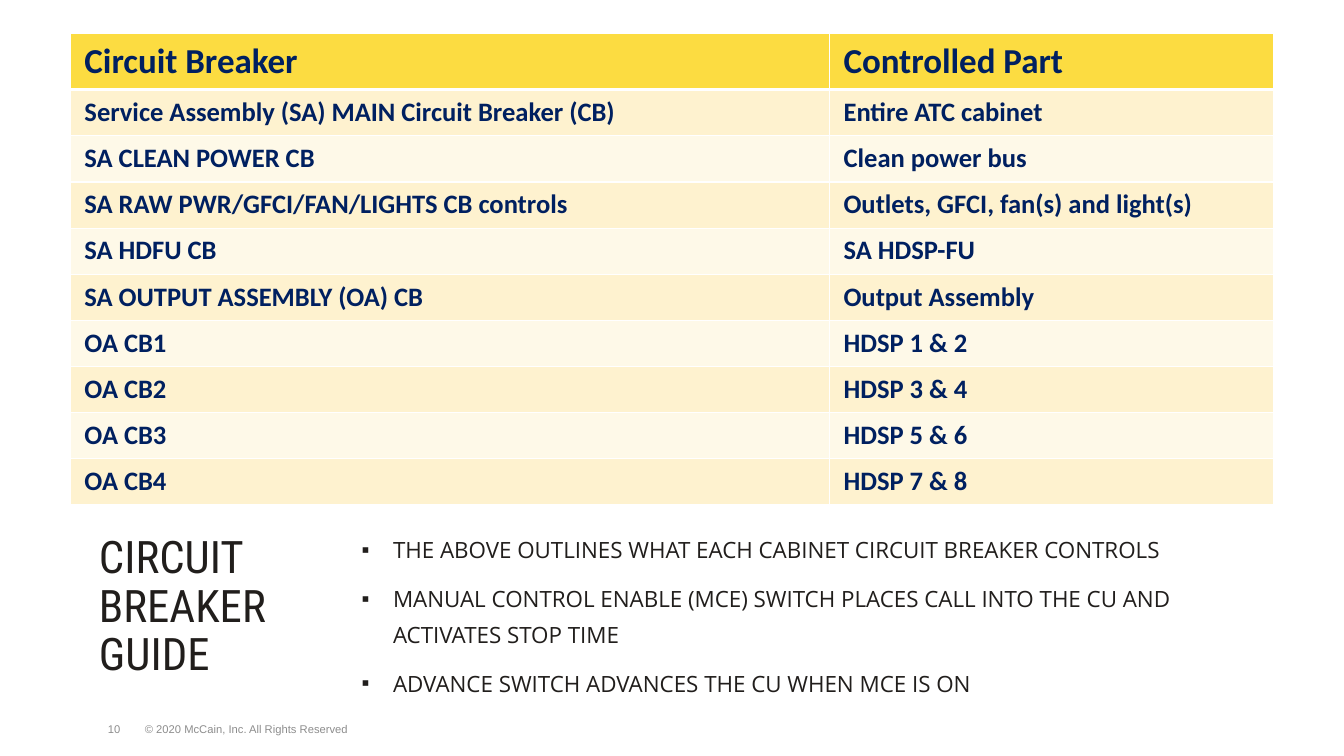
from lxml import etree
from pptx import Presentation
from pptx import util as u
from pptx.dml.color import RGBColor
from pptx.enum import text
from pptx.oxml import ns

TITLE = "CIRCUIT BREAKER GUIDE"
NOTES = [
    "THE ABOVE OUTLINES WHAT EACH CABINET CIRCUIT BREAKER CONTROLS",
    "MANUAL CONTROL ENABLE (MCE) SWITCH PLACES CALL INTO THE CU AND ACTIVATES STOP TIME",
    "ADVANCE SWITCH ADVANCES THE CU WHEN MCE IS ON",
]
BREAKERS = [
    ("Circuit Breaker", "Controlled Part"),
    ("Service Assembly (SA) MAIN Circuit Breaker (CB)", "Entire ATC cabinet"),
    ("SA CLEAN POWER CB", "Clean power bus"),
    ("SA RAW PWR/GFCI/FAN/LIGHTS CB controls", "Outlets, GFCI, fan(s) and light(s)"),
    ("SA HDFU CB", "SA HDSP-FU"),
    ("SA OUTPUT ASSEMBLY (OA) CB", "Output Assembly"),
    ("OA CB1", "HDSP 1 & 2"),
    ("OA CB2", "HDSP 3 & 4"),
    ("OA CB3", "HDSP 5 & 6"),
    ("OA CB4", "HDSP 7 & 8"),
]
FOOTERS = [
    ("© 2020 McCain, Inc. All Rights Reserved", 3.4, 9.25, text.PP_ALIGN.LEFT),
    ("10", 2.34, 1.07, text.PP_ALIGN.CENTER),
]
COLORS = {
    "ink": "211E1C", "navy": "002060", "gray": "8D8D8D", "rule": "FFFFFF",
    "header": "FCDC41", "odd": "FEF2CF", "even": "FEF9E8",
}
COLUMN_WIDTHS = (19.13, 11.18)
HEADER_HEIGHT, ROW_HEIGHT = 1.37, 1.16


def place(part, left, top, width, height):
    part.left, part.top = u.Cm(left), u.Cm(top)
    part.width, part.height = u.Cm(width), u.Cm(height)


def style(paragraph, font_name, size, color, bold=False):
    for run in paragraph.runs:
        run.font.name, run.font.size, run.font.bold = font_name, u.Pt(size), bold
        run.font.color.rgb = RGBColor.from_string(COLORS[color])


def set_frame(frame, anchor):
    frame.word_wrap = True
    frame.auto_size = text.MSO_AUTO_SIZE.NONE
    frame.vertical_anchor = anchor


def add_bullet(paragraph):
    props = paragraph._p.get_or_add_pPr()
    props.set("marL", str(u.Cm(0.79)))
    props.set("indent", str(-u.Cm(0.79)))
    etree.SubElement(props, ns.qn("a:buFont")).set("typeface", "Arial")
    etree.SubElement(props, ns.qn("a:buChar")).set("char", "▪")


def add_border(cell, side, points):
    line = etree.SubElement(cell._tc.get_or_add_tcPr(), ns.qn("a:ln" + side))
    line.set("w", str(u.Pt(points)))
    fill = etree.SubElement(line, ns.qn("a:solidFill"))
    etree.SubElement(fill, ns.qn("a:srgbClr")).set("val", COLORS["rule"])


def add_footers(slide):
    for words, left, width, align in FOOTERS:
        footer = slide.shapes.add_textbox(u.Cm(left), u.Cm(17.65), u.Cm(width), u.Cm(1.02))
        set_frame(footer.text_frame, text.MSO_ANCHOR.BOTTOM)
        line = footer.text_frame.paragraphs[0]
        line.text, line.alignment = words, align
        style(line, "Arial", 8, "gray")


def fill_title(title):
    place(title, 2.24, 13.23, 5.82, 4.04)
    set_frame(title.text_frame, text.MSO_ANCHOR.BOTTOM)
    heading = title.text_frame.paragraphs[0]
    heading.text, heading.alignment = TITLE, text.PP_ALIGN.LEFT
    heading.line_spacing = 0.9
    style(heading, "Roboto Condensed", 32, "ink")


def fill_notes(body):
    place(body, 8.86, 13.59, 22.73, 3.68)
    set_frame(body.text_frame, text.MSO_ANCHOR.MIDDLE)
    body.text_frame.text = "\n".join(NOTES)
    for index, note in enumerate(body.text_frame.paragraphs):
        add_bullet(note)
        note.alignment = text.PP_ALIGN.LEFT
        note.line_spacing = 1.31
        note.space_before = u.Pt(10 if index else 0)
        style(note, "Open Sans", 16, "ink")


def add_breakers(slide):
    height = HEADER_HEIGHT + ROW_HEIGHT * (len(BREAKERS) - 1)
    breakers = slide.shapes.add_table(
        len(BREAKERS), len(COLUMN_WIDTHS),
        u.Cm(1.78), u.Cm(0.85), u.Cm(sum(COLUMN_WIDTHS)), u.Cm(height)).table
    for column, width in zip(breakers.columns, COLUMN_WIDTHS):
        column.width = u.Cm(width)
    for r, entries in enumerate(BREAKERS):
        breakers.rows[r].height = u.Cm(ROW_HEIGHT if r else HEADER_HEIGHT)
        band = "header" if r == 0 else "odd" if r % 2 else "even"
        for c, words in enumerate(entries):
            cell = breakers.cell(r, c)
            cell.margin_left = cell.margin_right = u.Cm(0.35)
            cell.margin_top = cell.margin_bottom = u.Cm(0.17)
            for side in "LRTB":
                thick = (r, side) in ((0, "B"), (1, "T"))
                add_border(cell, side, 2.5 if thick else 0.84)
            cell.fill.solid()
            cell.fill.fore_color.rgb = RGBColor.from_string(COLORS[band])
            cell.text_frame.text = words
            style(cell.text_frame.paragraphs[0], "Calibri", 19 if r else 25, "navy", True)


def main():
    deck = Presentation()
    deck.slide_width, deck.slide_height = u.Cm(33.87), u.Cm(19.05)
    slide = deck.slides.add_slide(deck.slide_layouts[1])
    add_footers(slide)
    fill_title(slide.shapes.title)
    fill_notes(slide.placeholders[1])
    add_breakers(slide)
    deck.save("out.pptx")


if __name__ == "__main__":
    main()
